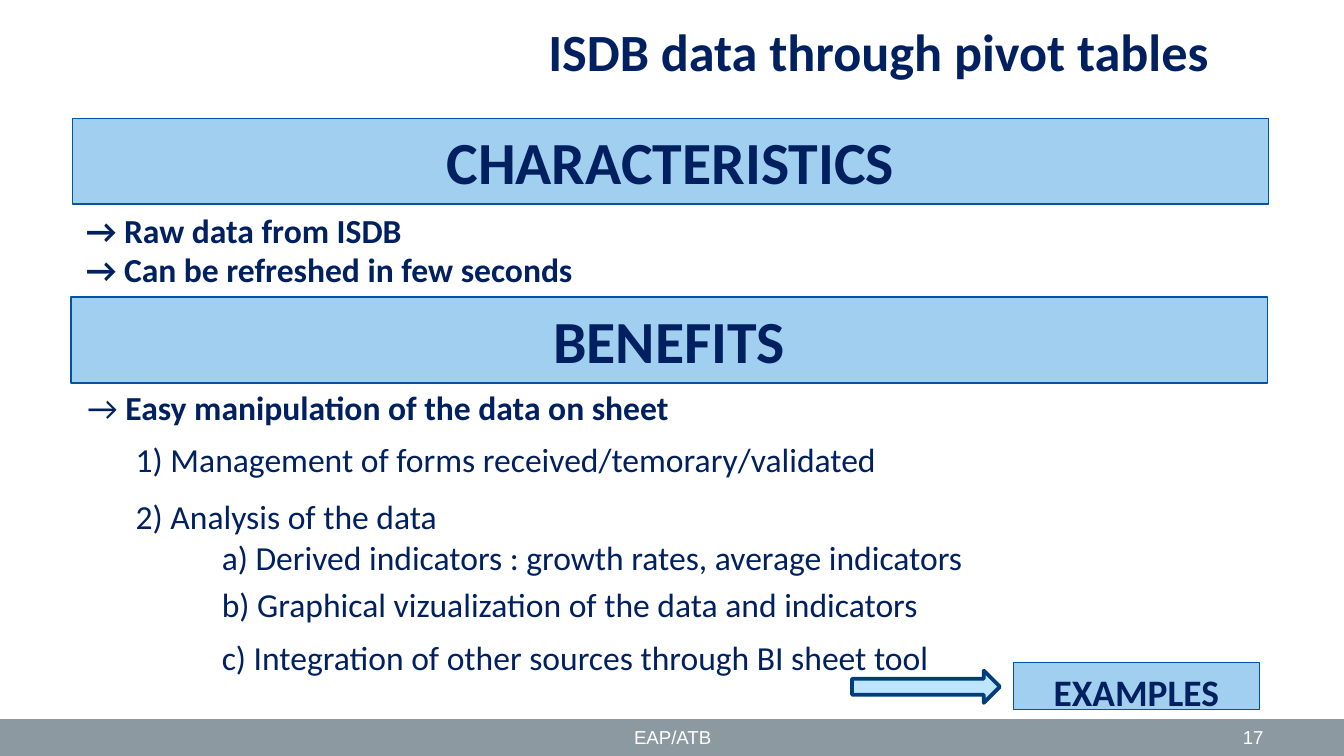
import pptx
import pptx.util
import pptx.dml.color
import pptx.enum.shapes
import pptx.enum.text
from dataclasses import dataclass

Inches, Pt = pptx.util.Inches, pptx.util.Pt
SHAPE = pptx.enum.shapes.MSO_SHAPE
ALIGN = pptx.enum.text.PP_ALIGN
ANCHOR = pptx.enum.text.MSO_ANCHOR
FIT = pptx.enum.text.MSO_AUTO_SIZE


@dataclass
class Theme:
    ink: str = "002060"
    panel: str = "A1CFEF"
    edge: str = "0054A4"
    arrow: str = "BEE5FF"
    rim: str = "003E79"
    bar: str = "8C99A1"
    white: str = "FFFFFF"
    title: int = 28
    banner: int = 32
    label: int = 20
    body: int = 18
    foot: int = 10


theme = Theme()


def write(para, text, size=theme.body, color=theme.ink, bold=False,
          face="Calibri", align=ALIGN.LEFT):
    para.alignment = align
    run = para.add_run()
    run.text = text
    run.font.name = face
    run.font.size = Pt(size)
    run.font.bold = bold
    run.font.color.rgb = pptx.dml.color.RGBColor.from_string(color)


def draw(kind, box, fill, line=None, width=0.75):
    shape = slide.shapes.add_shape(kind, *map(Inches, box))
    shape.shadow.inherit = False
    shape.fill.solid()
    shape.fill.fore_color.rgb = pptx.dml.color.RGBColor.from_string(fill)
    if line:
        shape.line.color.rgb = pptx.dml.color.RGBColor.from_string(line)
        shape.line.width = Pt(width)
    else:
        shape.line.fill.background()
    return shape


# Slide in 16:9
deck = pptx.Presentation()
deck.slide_width = Inches(10)
deck.slide_height = Inches(10) * 9 // 16
slide = deck.slides.add_slide(deck.slide_layouts[3])
title, traits, gains = slide.placeholders

# Footer bar down to the slide's edge, with name and page number
bar = draw(SHAPE.RECTANGLE, (0, 5.35, 10, 0.27), theme.bar)
bar.height = deck.slide_height - bar.top
for text, left, width, align in (("EAP/ATB", 3.42, 3.17, ALIGN.CENTER),
                                 ("17", 7.17, 2.33, ALIGN.RIGHT)):
    box = slide.shapes.add_textbox(Inches(left), bar.top, Inches(width), bar.height)
    box.text_frame.word_wrap = True
    box.text_frame.vertical_anchor = ANCHOR.MIDDLE
    write(box.text_frame.paragraphs[0], text, size=theme.foot,
          color=theme.white, face="Arial", align=align)

# Banners and examples label
for text, box, size in (("CHARACTERISTICS", (0.54, 0.88, 8.9, 0.64), theme.banner),
                        ("BENEFITS", (0.53, 2.21, 8.9, 0.64), theme.banner),
                        ("EXAMPLES", (7.54, 4.93, 1.83, 0.35), theme.label)):
    panel = draw(SHAPE.RECTANGLE, box, theme.panel, theme.edge)
    panel.text_frame.vertical_anchor = ANCHOR.TOP
    write(panel.text_frame.paragraphs[0], text, size=size, bold=True, align=ALIGN.CENTER)

# Arrow to the examples
draw(SHAPE.RIGHT_ARROW, (6.34, 4.99, 1.1, 0.24), theme.arrow, theme.rim, 2)

# Lists: each line has indent in inches, space before in points, then (text, bold) runs
lists = (
    (traits, (0.54, 1.52, 8.9, 0.69), 21, (
        (0, 0, (("→ Raw data from ISDB", True),)),
        (0, 0, (("→ Can be refreshed in few seconds", True),)))),
    (gains, (0.55, 2.82, 8.95, 2.27), 22, (
        (0, 0, (("→ ", False), ("Easy manipulation of the data on sheet", True))),
        (0.36, 6, (("1) Management of forms received/temorary/validated", False),)),
        (0.36, 8.5, (("2) Analysis of the data", False),)),
        (1, 0, (("a) Derived indicators : growth rates, average indicators", False),)),
        (1, 3.5, (("b) Graphical vizualization of the data and indicators", False),)),
        (1, 6, (("c) Integration of other sources through BI sheet tool", False),)))),
)
for holder, box, pitch, lines in lists:
    holder.left, holder.top, holder.width, holder.height = map(Inches, box)
    frame = holder.text_frame
    frame.auto_size = FIT.NONE
    frame.vertical_anchor = ANCHOR.TOP
    for i, (indent, gap, runs) in enumerate(lines):
        para = frame.add_paragraph() if i else frame.paragraphs[0]
        props = para._p.get_or_add_pPr()
        props.set("marL", str(Inches(indent)))
        props.set("indent", "0")
        props.append(pptx.oxml.parse_xml(
            '<a:buNone xmlns:a="http://schemas.openxmlformats.org/drawingml/2006/main"/>'))
        para.line_spacing = Pt(pitch)
        para.space_before = Pt(gap)
        for text, bold in runs:
            write(para, text, bold=bold)

# Title
title.left, title.top, title.width, title.height = map(Inches, (3.98, -0.04, 6.02, 0.84))
title.text_frame.auto_size = FIT.NONE
title.text_frame.vertical_anchor = ANCHOR.MIDDLE
write(title.text_frame.paragraphs[0], "ISDB data through pivot tables",
      size=theme.title, bold=True)

deck.save("out.pptx")
